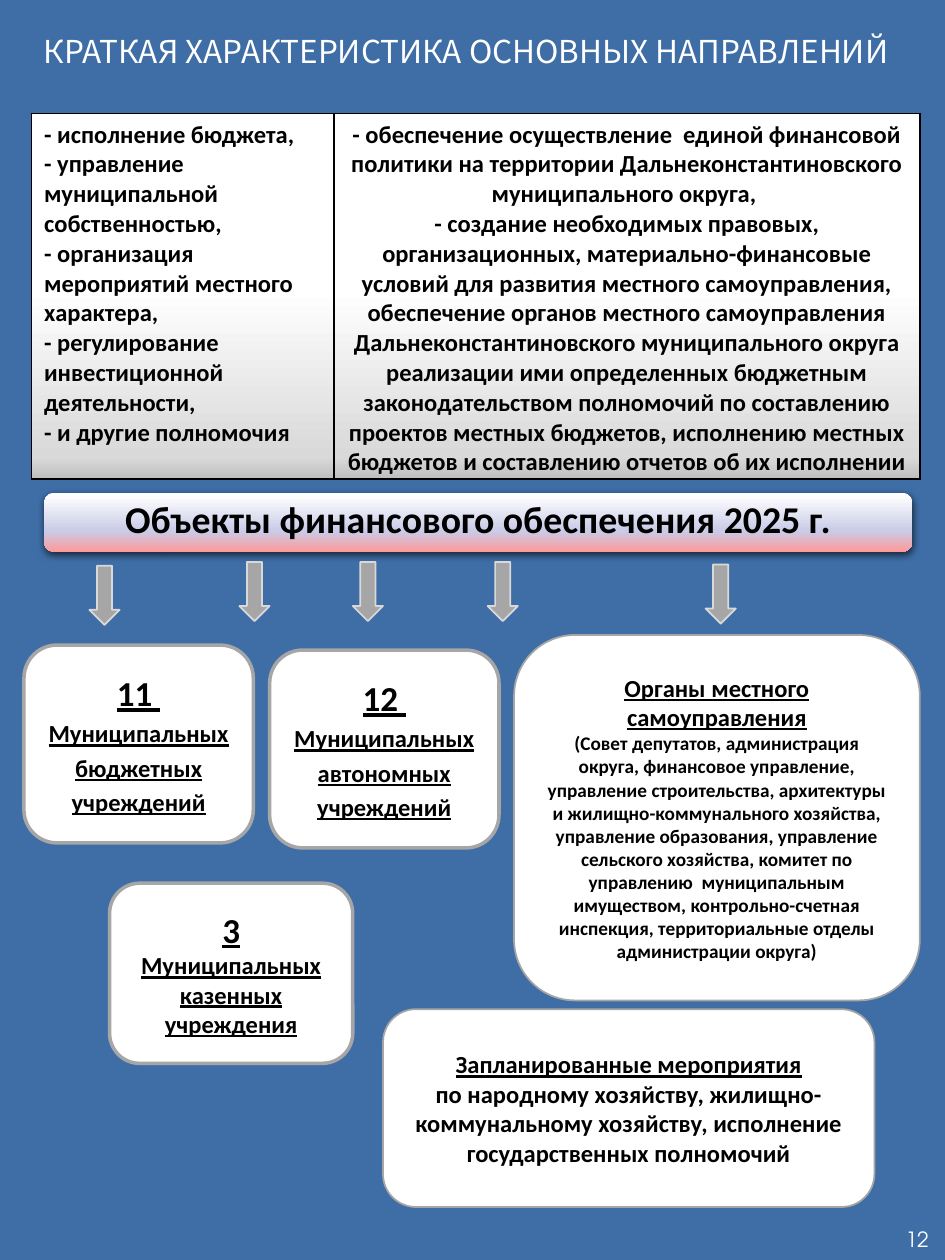
"""Build the slide on main directions and objects of municipal financing."""
from lxml import etree
from pptx import Presentation
from pptx.dml.color import RGBColor
from pptx.enum.shapes import MSO_SHAPE
from pptx.enum.text import MSO_ANCHOR, MSO_AUTO_SIZE, PP_ALIGN
from pptx.oxml.ns import qn
from pptx.util import Inches, Pt

ROUND, ARROW = MSO_SHAPE.ROUNDED_RECTANGLE, MSO_SHAPE.DOWN_ARROW
LEFT, CENTER, RIGHT = PP_ALIGN.LEFT, PP_ALIGN.CENTER, PP_ALIGN.RIGHT
TOP, MIDDLE = MSO_ANCHOR.TOP, MSO_ANCHOR.MIDDLE
BLUE = RGBColor(0x3F, 0x6E, 0xA7)
WHITE = RGBColor(0xFF, 0xFF, 0xFF)
BLACK = RGBColor(0, 0, 0)
GRAY = RGBColor(0xA6, 0xA6, 0xA6)
LIGHT = RGBColor(0xD9, 0xD9, 0xD9)
SILVER = RGBColor(0xBF, 0xBF, 0xBF)
LILAC = RGBColor(0xC9, 0xCB, 0xE7)
PINK = RGBColor(0xFF, 0x99, 0x99)

TITLE = "КРАТКАЯ ХАРАКТЕРИСТИКА ОСНОВНЫХ НАПРАВЛЕНИЙ"
HEAD = "Объекты финансового обеспечения 2025 г."
PAGE = "12"
TASKS = [
    "- исполнение бюджета,",
    "- управление муниципальной собственностью,",
    "- организация мероприятий местного характера,",
    "- регулирование инвестиционной деятельности,",
    "- и другие полномочия",
]
GOALS = [
    "- обеспечение осуществление  единой финансовой политики на территории "
    "Дальнеконстантиновского муниципального округа, ",
    "- создание необходимых правовых, организационных, материально-финансовые "
    "условий для развития местного самоуправления, обеспечение органов местного "
    "самоуправления Дальнеконстантиновского муниципального округа реализации ими "
    "определенных бюджетным законодательством полномочий по составлению проектов "
    "местных бюджетов, исполнению местных бюджетов и составлению отчетов об их "
    "исполнении",
]
COLUMNS = [(2.4, LEFT, TASKS), (4.65, CENTER, GOALS)]
CELL_STOPS = [(48, WHITE), (94, LIGHT), (100, SILVER)]
HEAD_STOPS = [(4, WHITE), (65, LILAC), (100, PINK)]
ARROWS = [(0.71, 4.49), (1.9, 4.46), (2.8, 4.46), (3.87, 4.46), (5.6, 4.48)]


def count(number, kind):
    return [[(number, 20, True)]] + [
        [(word, 14, True)] for word in ("Муниципальных", kind, "учреждений")]


CARDS = [
    ((0.19, 5.12, 1.82, 1.57), 2, 2.8, count("11 ", "бюджетных")),
    ((2.14, 5.16, 1.82, 1.57), 2, 2.8, count("12 ", "автономных")),
    ((0.87, 7.01, 1.93, 1.43), 2, 0,
     [[("3 ", 20, True), ("Муниципальных казенных учреждения", 14, True)]]),
    ((4.08, 5.04, 3.22, 2.9), 1, 0, [
        [("Органы местного самоуправления", 14, True)],
        [("(Совет депутатов, администрация округа, финансовое управление, "
          "управление строительства, архитектуры и жилищно-коммунального "
          "хозяйства, управление образования, управление сельского хозяйства, "
          "комитет по управлению  муниципальным имуществом, контрольно-счетная "
          "инспекция, территориальные отделы администрации округа)", 11, False)]]),
    ((3.04, 8.01, 3.9, 1.57), 1, 0, [
        [("Запланированные мероприятия", 14, True)],
        [("по народному хозяйству, жилищно-коммунальному хозяйству, "
          "исполнение государственных полномочий", 14, False)]]),
]


def write(frame, paras, align=CENTER, face="Calibri", color=BLACK, bold=True, gap=0):
    for i, parts in enumerate(paras):
        para = frame.add_paragraph() if i else frame.paragraphs[0]
        para.alignment = align
        if i and gap:
            para.space_before = Pt(gap)
        for text, size, under in parts:
            run = para.add_run()
            run.text = text
            font = run.font
            font.name, font.size, font.bold = face, Pt(size), bold
            font.underline, font.color.rgb = under, color


def node(parent, tag, **attrs):
    return etree.SubElement(parent, qn(tag), attrs)


def paint(parent, color):
    return node(parent, "a:srgbClr", val=str(color))


def blend(fill, root, stops):
    fill.gradient()
    fill.gradient_angle = 270
    group = next(root.iter(qn("a:gsLst")))
    for old in list(group):
        group.remove(old)
    for place, color in stops:
        paint(node(group, "a:gs", pos=str(place * 1000)), color)


def edge(cell):
    props = cell._tc.get_or_add_tcPr()
    for i, side in enumerate(("a:lnL", "a:lnR", "a:lnT", "a:lnB")):
        line = node(props, side, w=str(Pt(1)))
        paint(node(line, "a:solidFill"), BLACK)
        props.insert(i, line)


def add(slide, kind, box, fill=None, line=None, width=1):
    shape = slide.shapes.add_shape(kind, *map(Inches, box))
    shape.shadow.inherit = False
    if fill is not None:
        shape.fill.solid()
        shape.fill.fore_color.rgb = fill
    if line is None:
        shape.line.fill.background()
    else:
        shape.line.color.rgb = line
        shape.line.width = Pt(width)
    frame = shape.text_frame
    frame.word_wrap = True
    frame.vertical_anchor = MIDDLE
    return shape


def add_title(slide):
    title = slide.shapes.title
    title.left, title.top, title.width, title.height = map(Inches, (0.2, 0.2, 7.1, 0.71))
    frame = title.text_frame
    frame.auto_size, frame.vertical_anchor = MSO_AUTO_SIZE.NONE, TOP
    frame.margin_left = 0
    write(frame, [[(TITLE, 18, False)]], face="Noto Sans CJK SC", color=WHITE, bold=False)


def add_grid(slide):
    table = slide.shapes.add_table(1, 2, *map(Inches, (0.25, 0.9, 7.05, 2.9))).table
    table.first_row = table.horz_banding = False
    for i, (width, align, items) in enumerate(COLUMNS):
        table.columns[i].width = Inches(width)
        cell = table.cell(0, i)
        cell.margin_bottom = 0
        blend(cell.fill, cell._tc, CELL_STOPS)
        edge(cell)
        write(cell.text_frame, [[(item, 14, False)] for item in items], align)


def add_head(slide):
    bar = add(slide, ROUND, (0.35, 3.91, 6.89, 0.47))
    blend(bar.fill, bar._element, HEAD_STOPS)
    effects = bar._element.spPr.find(qn("a:effectLst"))
    shade = node(effects, "a:outerShdw", blurRad=str(Pt(4.5)), dist=str(Pt(1.5)),
                 dir="5400000", rotWithShape="0")
    node(paint(shade, BLACK), "a:alpha", val="63000")
    write(bar.text_frame, [[(HEAD, 21.6, False)]])
    bar.text_frame.paragraphs[0].line_spacing = 0.8


def add_page(slide):
    frame = slide.shapes.add_textbox(*map(Inches, (5.72, 9.57, 1.75, 0.53))).text_frame
    frame.word_wrap = True
    frame.vertical_anchor = MIDDLE
    write(frame, [[(PAGE, 12, False)]], RIGHT, "TeX Gyre Adventor", WHITE, False)


def main():
    deck = Presentation()
    deck.slide_width, deck.slide_height = Inches(7.5), Inches(10)
    slide = deck.slides.add_slide(deck.slide_layouts[5])
    slide.background.fill.solid()
    slide.background.fill.fore_color.rgb = BLUE
    add_title(slide)
    add_page(slide)
    add_grid(slide)
    add_head(slide)
    for left, top in ARROWS:
        add(slide, ARROW, (left, top, 0.24, 0.47), GRAY, LIGHT)
    for box, width, gap, paras in CARDS:
        card = add(slide, ROUND, box, WHITE, GRAY, width)
        write(card.text_frame, paras, gap=gap)
    deck.save("out.pptx")


if __name__ == "__main__":
    main()
